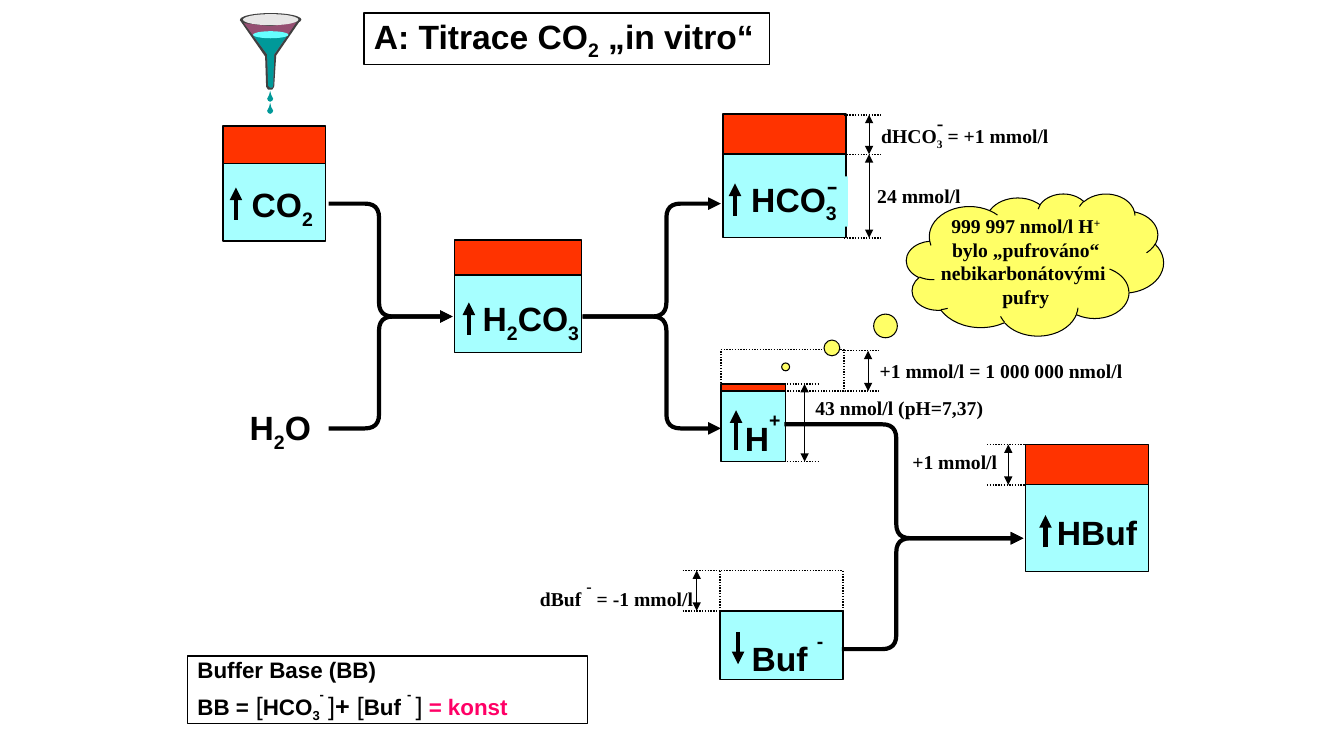
from dataclasses import dataclass
from itertools import pairwise
from typing import Any, NamedTuple

from lxml.etree import SubElement
from pptx import Presentation
from pptx.dml.color import RGBColor
from pptx.enum.dml import MSO_LINE
from pptx.enum.shapes import MSO_CONNECTOR, MSO_SHAPE
from pptx.enum.text import MSO_ANCHOR, MSO_AUTO_SIZE, PP_ALIGN
from pptx.oxml.ns import qn
from pptx.util import Inches, Pt

BLACK = RGBColor(0, 0, 0)
WHITE = RGBColor(255, 255, 255)
RED = RGBColor(0xFF, 0x33, 0x00)
AQUA = RGBColor(0xA6, 0xFF, 0xFF)
YELLOW = RGBColor(0xFF, 0xFF, 0x66)
PINK = RGBColor(0xFF, 0x00, 0x66)
STEEL = RGBColor(0x40, 0x40, 0x40)
PLUM = RGBColor(0x95, 0x4F, 0x72)
TEAL = RGBColor(0x00, 0x99, 0x99)
SILVER = RGBColor(0xE7, 0xE6, 0xE6)
CYAN = RGBColor(0x66, 0xFF, 0xFF)

# Grid of square cells, ten to the inch
CELL = Inches(0.1)
ARIAL, TIMES = "Arial", "Times New Roman"
DOT = MSO_LINE.ROUND_DOT
Point = tuple[float, float]


class Run(NamedTuple):
    text: str
    base: int = 0
    form: dict[str, Any] = {}
    color: RGBColor = BLACK


class Tub(NamedTuple):
    left: float
    top: float
    width: float
    level: float
    bottom: float
    cap: RGBColor = RED
    dash: Any = None


class Gauge(NamedTuple):
    x: float
    marks: tuple[float, ...]
    left: float


class Route(NamedTuple):
    start: Point
    trunk: float
    end: Point


@dataclass
class Label:
    box: tuple[float, float, float, float]
    lines: list[list[Run]]
    face: str = ARIAL
    size: int = 24
    bold: bool = True
    align: Any = PP_ALIGN.CENTER
    wrap: bool = False


deck = Presentation()
deck.slide_width, deck.slide_height = Inches(13.33), Inches(7.5)
slide = deck.slides.add_slide(deck.slide_layouts[6])
shapes = slide.shapes


def grid(*cells: float) -> list[int]:
    return [round(c * CELL) for c in cells]


def apply(item: Any, form: dict[str, Any]) -> None:
    for key, value in form.items():
        setattr(item, key, value)


def stroke(item: Any, width: float, dash: Any = None, ends: tuple[str, ...] = ()) -> None:
    item.line.color.rgb = BLACK
    apply(item.line, {"width": Pt(width), "dash_style": dash})
    for end in ends:
        SubElement(item.line._get_or_add_ln(), qn(f"a:{end}"), type="triangle")


def paint(item: Any, fill: RGBColor | None, width: float = 0, dash: Any = None) -> Any:
    item.shadow.inherit = False
    if fill is None:
        item.fill.background()
    else:
        item.fill.solid()
        item.fill.fore_color.rgb = fill
    if width:
        stroke(item, width, dash)
    else:
        item.line.fill.background()
    return item


def rect(box: tuple[float, ...], fill: RGBColor | None, dash: Any = None) -> Any:
    return paint(shapes.add_shape(MSO_SHAPE.RECTANGLE, *grid(*box)), fill, 1, dash)


def oval(box: tuple[float, ...], fill: RGBColor) -> Any:
    return paint(shapes.add_shape(MSO_SHAPE.OVAL, *grid(*box)), fill)


def trace(points: list[Point], close: bool) -> Any:
    spots = [tuple(grid(*p)) for p in points]
    pen = shapes.build_freeform(*spots[0])
    pen.add_line_segments(spots[1:], close=close)
    return pen.convert_to_shape()


def line(start: Point, end: Point, width: float, dash: Any = None, ends: tuple[str, ...] = ()) -> None:
    item = shapes.add_connector(MSO_CONNECTOR.STRAIGHT, *grid(*start, *end))
    stroke(item, width, dash, ends)
    SubElement(item._element.spPr, qn("a:effectLst"))


def write(item: Any, label: Label) -> None:
    frame = item.text_frame
    apply(frame, {"word_wrap": label.wrap, "auto_size": MSO_AUTO_SIZE.SHAPE_TO_FIT_TEXT})
    for i, runs in enumerate(label.lines):
        para = frame.add_paragraph() if i else frame.paragraphs[0]
        para.alignment = label.align
        for part in runs:
            run = para.add_run()
            run.text = part.text
            basic = {"name": label.face, "size": Pt(label.size), "bold": label.bold}
            apply(run.font, basic | part.form)
            run.font.color.rgb = part.color
            if part.base:
                run._r.get_or_add_rPr().set("baseline", str(part.base * 1000))


def tub(t: Tub) -> None:
    rect((t.left, t.top, t.width, t.level - t.top), t.cap, t.dash)
    rect((t.left, t.level, t.width, t.bottom - t.level), AQUA)


def gauge(g: Gauge) -> None:
    for y in g.marks:
        line((g.left, y), (g.left + 3.8, y), 1, DOT)
    for top, low in pairwise(g.marks):
        line((g.x, top), (g.x, low), 0.75, ends=("headEnd", "tailEnd"))


def route(r: Route, bend: float = 1.4, steps: int = 6) -> None:
    (x, y), (far, goal) = r.start, r.end
    way = 1 if goal > y else -1
    arcs = [((r.trunk - bend, y), (r.trunk, y), (r.trunk, y + way * bend)),
            ((r.trunk, goal - way * bend), (r.trunk, goal), (r.trunk + bend, goal))]
    points = [r.start]
    for a, b, c in arcs:
        for t in (n / steps for n in range(steps + 1)):
            points.append(tuple((1 - t) ** 2 * p + 2 * t * (1 - t) * q + t * t * s
                                for p, q, s in zip(a, b, c)))
    item = paint(trace(points + [r.end], False), None, 3)
    stroke(item, 3, ends=("tailEnd",))


# Vessels, with the dotted outline of the added acid
rect((71.5, 34.7, 12.2, 4.1), None, DOT)
for t in (Tub(22.1, 12.5, 10.2, 16.2, 23.9), Tub(45.1, 23.8, 12.6, 27.3, 35),
          Tub(71.7, 11.3, 12.2, 15.3, 23.6), Tub(71.5, 38.1, 6.4, 38.8, 45.8),
          Tub(101.7, 44.1, 12.2, 48.1, 56.7), Tub(71.4, 56.6, 12.2, 60.6, 67.4, WHITE, DOT)):
    tub(t)

# Title, formulas, amounts and the buffer base sum
two, three, minus = Run("2", -25), Run("3", -25), Run("-", 70)
big, thin = {"size": Pt(18)}, {"size": Pt(18), "bold": False}
small = {"face": TIMES, "size": 14}
left = {"align": PP_ALIGN.LEFT}
title = Label((36.1, 1.3, 40.2, 5.1), [[Run("A: Titrace CO"), two, Run(" „in vitro“")]], **left)
total = Label((18.6, 65.1, 39.7, 6.7), [
    [Run("Buffer Base (BB)")],
    [Run("BB ="), Run(" ", 0, big), Run("[", 0, thin), Run("HCO"), three, minus, Run(" ", 70, big),
     Run("]", 0, thin), Run("+ ", 0, big), Run("[", 0, thin), Run("Buf "), minus,
     Run(" ", 70, big), Run("]", 0, thin), Run(" "), Run("= konst", color=PINK)],
], size=16, wrap=True, **left)
for label in (title, total):
    write(rect(label.box, None), label)
bicarb = Label((73.4, 17.5, 10.7, 5), [[Run("HCO"), three]])
write(paint(shapes.add_shape(MSO_SHAPE.RECTANGLE, *grid(*bicarb.box)), AQUA), bicarb)

for label in (
    Label((23.9, 17.8, 8.2, 5), [[Run("CO"), two]]),
    Label((23.7, 39.9, 8.2, 5), [[Run("H"), two, Run("O")]]),
    Label((46.7, 29.1, 11.9, 5), [[Run("H"), two, Run("CO"), three]]),
    Label((81, 15.7, 3.1, 5), [[Run("-")]], TIMES, bold=False),
    Label((72.8, 40, 5.7, 5), [[Run("H"), Run("+", 70)]]),
    Label((73.5, 61.9, 9.2, 5), [[Run("Buf "), minus]]),
    Label((103.8, 50.3, 10, 5), [[Run("HBuf")]]),
    Label((86.2, 35.1, 26.2, 3.3), [[Run("+1 mmol/l = 1 000 000 nmol/l")]], **small),
    Label((85.6, 17.8, 11.1, 3.3), [[Run("24 mmol/l")]], **small),
    Label((77.8, 38.8, 22.8, 3.3), [[Run("43 nmol/l (pH=7,37)")]], **small),
    Label((88.7, 44.1, 12, 3.3), [[Run("+1 mmol/l")]], **small),
    Label((51.9, 56.7, 18.5, 3.3),
          [[Run("dBuf "), Run("-", 50, {"size": Pt(20)}), Run(" = -1 mmol/l")]], **small),
    Label((84.3, 11.8, 22.8, 3.3), [[Run("dHCO"), three, Run(" = +1 mmol/l")]], **small),
    Label((92.8, 10.5, 0.9, 3.3), [[Run("-")]], **small),
):
    write(shapes.add_textbox(*grid(*label.box)), label)

# Reaction routes
for r in (Route((32.6, 20.2), 37.6, (44.9, 31.4)), Route((32.6, 42.5), 37.6, (44.9, 31.4)),
          Route((57.8, 31.4), 66.1, (71.5, 20.2)), Route((57.8, 31.4), 66.1, (71.5, 42.5)),
          Route((77.8, 42.1), 88.9, (101.5, 53.4)), Route((83.5, 64.4), 88.9, (101.5, 53.4))):
    route(r)

# Rise and fall arrows
for x, tail, tip in ((72.9, 21.4, 18.2), (46.5, 33.2, 30), (23.4, 21.8, 18.6),
                     (73, 44.6, 40.7), (103.7, 54.3, 51.1), (73.2, 62.7, 65.9)):
    line((x, tail), (x, tip), 3, ends=("tailEnd",))

# Gauges beside the vessels
for g in (Gauge(86.2, (11.4, 15.3, 23.6), 83.7), Gauge(86.1, (34.8, 38.8), 83.5),
          Gauge(79.8, (38.1, 45.8), 77.5), Gauge(69.1, (56.6, 60.6), 67.7),
          Gauge(100, (44.1, 48.1), 97.9)):
    gauge(g)

# Funnel with two drops
stem = [(26.5, 5.4), (26.6, 8.5), (26.8, 8.7), (27, 8.7), (27.1, 8.5), (27.2, 5.4)]
shell = [(23.8, 2), (26.3, 5.6), (26.4, 8.6), (26.6, 8.9), (27, 8.9), (27.2, 8.6), (27.4, 5.5), (29.8, 2)]
glass = [(24.2, 2.3), *stem, (29.4, 2.2), (26.8, 2.6)]
paint(trace(shell, True), STEEL)
oval((23.8, 1.3, 6.1, 1.3), STEEL)
paint(trace(glass, True), PLUM)
paint(trace([(25.1, 3.5), *stem, (28.5, 3.5)], True), TEAL)
oval((24.1, 1.4, 5.5, 1.1), SILVER)
oval((25.1, 3.1, 3.5, 0.7), CYAN)
for y in (9, 10.2):
    drop = [(26.8, 0), (26.9, 0.4), (27.1, 0.8), (27, 1), (26.8, 1.1), (26.6, 1), (26.5, 0.8), (26.7, 0.4)]
    paint(trace([(x, y + dy) for x, dy in drop], True), TEAL)

# Thought cloud
cloud = paint(shapes.add_shape(MSO_SHAPE.CLOUD_CALLOUT, *grid(89.9, 19.2, 25.5, 14.1)), YELLOW, 0.75)
cloud.adjustments[0], cloud.adjustments[1] = -0.97, 0.72
write(cloud, Label((), [[Run("999 997 nmol/l H"), Run("+", 30)], [Run("bylo „pufrováno“")],
                        [Run("nebikarbonátovými ")], [Run("pufry")]], **small))
apply(cloud.text_frame, {"auto_size": MSO_AUTO_SIZE.NONE, "vertical_anchor": MSO_ANCHOR.MIDDLE})

deck.save("out.pptx")
